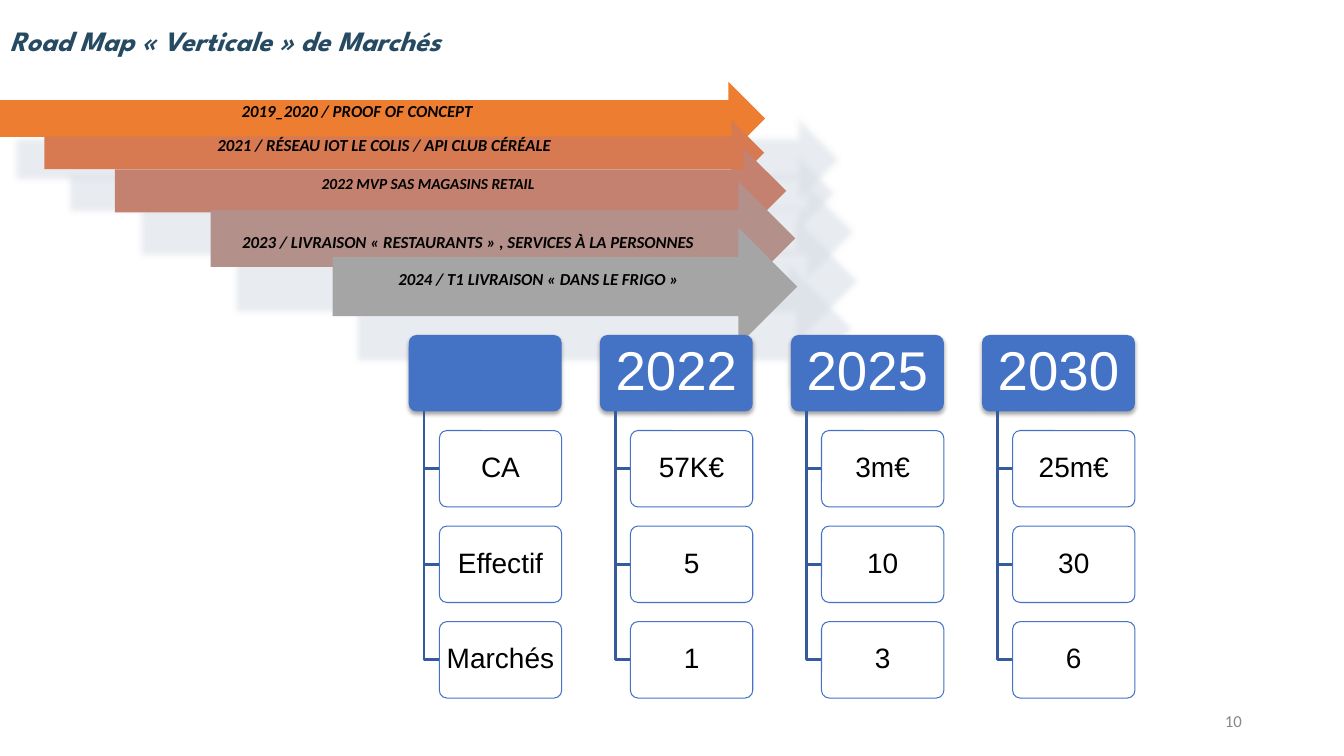
import pptx
import pptx.util
import pptx.dml.color
import pptx.enum.shapes
import pptx.enum.text
import pptx.oxml
import pptx.oxml.ns

Pt = pptx.util.Pt
SHAPES = pptx.enum.shapes.MSO_SHAPE
ALIGN = pptx.enum.text.PP_ALIGN
ANCHOR = pptx.enum.text.MSO_ANCHOR

COLORS = {
    "title": "264A61", "page": "888888", "black": "000000", "white": "FFFFFF",
    "header": "4472C4", "link": "365B9D", "arrow_shadow": "D6DCE5",
}

# Left, top, width, height, fill, text size, insets, label
ARROW_INSETS = (3.6, 3.6, 20.2, 13)
ARROWS = [
    (-6.5, 58.3, 553, 52.6, "ED7D31", 12, ARROW_INSETS,
     "2019_2020 / PROOF OF CONCEPT"),
    (31.7, 85.7, 514.1, 46.8, "D87A51", 12, ARROW_INSETS,
     "2021 / RÉSEAU IOT LE COLIS / API CLUB CÉRÉALE"),
    (82.1, 105.8, 479.5, 61.2, "C48170", 11, ARROW_INSETS,
     "2022 MVP SAS MAGASINS RETAIL"),
    (150.5, 129.6, 417.6, 81.4, "B4908B", 12, (3.6, 20.2, 33, 13),
     "2023 / LIVRAISON «\u00a0RESTAURANTS\u00a0» , SERVICES À LA PERSONNES"),
    (237.6, 162.7, 331.9, 84.2, "A5A5A5", 12, ARROW_INSETS,
     "2024 / T1 LIVRAISON «\u00a0DANS LE FRIGO\u00a0»"),
]

COLUMNS = [
    ("", ["CA", "Effectif", "Marchés"]),
    ("2022", ["57K€", "5", "1"]),
    ("2025", ["3m€", "10", "3"]),
    ("2030", ["25m€", "30", "6"]),
]

# The column grid is built from multiples of one unit
UNIT = 13.65
GRID_LEFT, GRID_TOP = 292, 239.3
HEADER_WIDTH, BOX_HEIGHT = 8 * UNIT, 4 * UNIT
COLUMN_PITCH, ROW_PITCH = 10 * UNIT, 5 * UNIT
LINK_INDENT, CARD_INDENT = 0.8 * UNIT, 1.6 * UNIT


def rgb(value):
    return pptx.dml.color.RGBColor.from_string(value)


def write(shape, text, size, font, color, align=ALIGN.CENTER, insets=(7.2, 3.6, 7.2, 3.6),
          anchor=ANCHOR.MIDDLE, emphasis=False, spacing=None):
    frame = shape.text_frame
    frame.word_wrap = True
    frame.vertical_anchor = anchor
    (frame.margin_left, frame.margin_top,
     frame.margin_right, frame.margin_bottom) = map(Pt, insets)
    frame.text = text
    paragraph = frame.paragraphs[0]
    paragraph.alignment = align
    paragraph.line_spacing = spacing
    for run in paragraph.runs:
        run.font.size = Pt(size)
        run.font.name = font
        run.font.color.rgb = rgb(color)
        run.font.bold = run.font.italic = emphasis


def add_text(slide, box, *args, **options):
    write(slide.shapes.add_textbox(*map(Pt, box)), *args, **options)


def add_box(slide, kind, box, fill, line=None):
    shape = slide.shapes.add_shape(kind, *map(Pt, box))
    shape.shadow.inherit = False
    shape.fill.solid()
    shape.fill.fore_color.rgb = rgb(fill)
    if line:
        shape.line.color.rgb = rgb(line)
        shape.line.width = Pt(0.75)
    else:
        shape.line.fill.background()
    return shape


def add_shadow(shape, color, alpha, blur, distance, angle, scale=100):
    effects = shape._element.spPr.find(pptx.oxml.ns.qn("a:effectLst"))
    effects.append(pptx.oxml.parse_xml(
        f'<a:outerShdw {pptx.oxml.ns.nsdecls("a")} blurRad="{Pt(blur)}" '
        f'dist="{Pt(distance)}" dir="{angle * 60000}" sx="{scale * 1000}" '
        f'sy="{scale * 1000}" algn="tl" rotWithShape="0">'
        f'<a:srgbClr val="{color}"><a:alpha val="{alpha * 1000}"/></a:srgbClr>'
        f'</a:outerShdw>'))


def add_arrow(slide, left, top, width, height, fill, size, insets, label):
    arrow = add_box(slide, SHAPES.RIGHT_ARROW, (left, top, width, height), fill)
    add_shadow(arrow, COLORS["arrow_shadow"], 54, 4, 33, 56, scale=106)
    write(arrow, label, size, "Calibri", COLORS["black"], insets=insets,
          emphasis=True, spacing=0.9)


def add_header(slide, left, year):
    header = add_box(slide, SHAPES.ROUNDED_RECTANGLE,
                     (left, GRID_TOP, HEADER_WIDTH, BOX_HEIGHT), COLORS["header"])
    header.adjustments[0] = 0.1
    add_shadow(header, COLORS["black"], 35, 3.1, 1.8, 90)
    if year:
        write(header, year, 39, "Arial", COLORS["white"],
              insets=(5.8, 3.6, 5.8, 3.6), spacing=0.9)


def add_link(slide, left, card_top):
    x, end_y = left + LINK_INDENT, card_top + BOX_HEIGHT / 2
    builder = slide.shapes.build_freeform(Pt(x), Pt(GRID_TOP + BOX_HEIGHT))
    builder.add_line_segments(
        [(Pt(x), Pt(end_y)), (Pt(left + CARD_INDENT), Pt(end_y))], close=False)
    link = builder.convert_to_shape()
    link.shadow.inherit = False
    link.fill.background()
    link.line.color.rgb = rgb(COLORS["link"])
    link.line.width = Pt(2)


def add_card(slide, left, top, value):
    card = add_box(slide, SHAPES.ROUNDED_RECTANGLE,
                   (left + CARD_INDENT, top, HEADER_WIDTH - CARD_INDENT, BOX_HEIGHT),
                   COLORS["white"], COLORS["header"])
    card.adjustments[0] = 0.1
    color = card.fill._xPr.find(".//" + pptx.oxml.ns.qn("a:srgbClr"))
    color.append(pptx.oxml.parse_xml(
        f'<a:alpha {pptx.oxml.ns.nsdecls("a")} val="90000"/>'))
    write(card, value, 20, "Arial", COLORS["black"],
          insets=(2.8, 2, 2.8, 2), spacing=0.9)


def add_column(slide, left, year, values):
    add_header(slide, left, year)
    for row, value in enumerate(values, start=1):
        top = GRID_TOP + row * ROW_PITCH
        add_link(slide, left, top)
        add_card(slide, left, top, value)


def main():
    presentation = pptx.Presentation()
    presentation.slide_width, presentation.slide_height = Pt(960), Pt(540)
    slide = presentation.slides.add_slide(presentation.slide_layouts[6])

    # Page number
    add_text(slide, (678.2, 500.4, 216, 28.8), "10", 12, "Calibri",
             COLORS["page"], align=ALIGN.RIGHT)

    # Market arrows
    for arrow in ARROWS:
        add_arrow(slide, *arrow)

    # Key figures by year
    for index, (year, values) in enumerate(COLUMNS):
        add_column(slide, GRID_LEFT + index * COLUMN_PITCH, year, values)

    # Title
    add_text(slide, (0, 13, 545, 31.7), "Road Map «\u00a0Verticale\u00a0» de Marchés",
             20, "League Spartan", COLORS["title"], align=ALIGN.LEFT,
             anchor=ANCHOR.TOP, emphasis=True)

    presentation.save("out.pptx")


if __name__ == "__main__":
    main()
